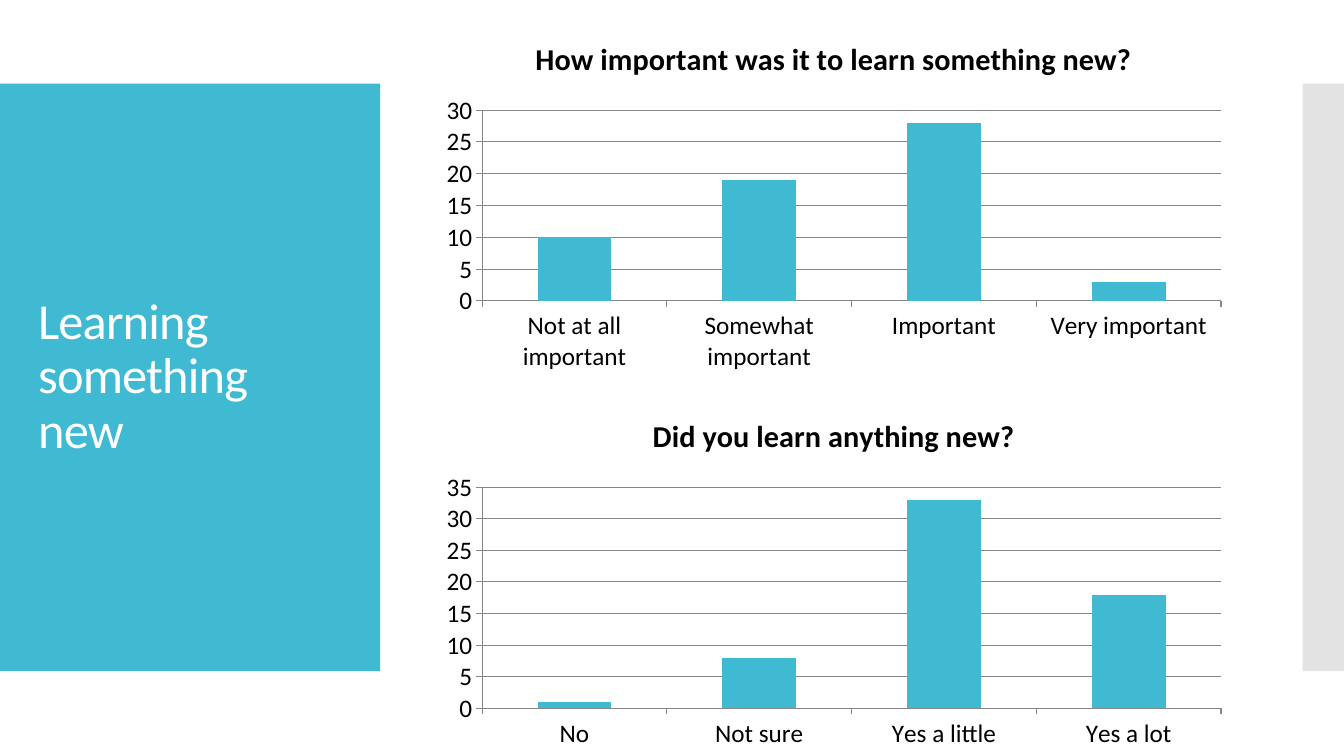
import pptx
import pptx.chart.data
import pptx.dml.color
import pptx.enum.chart
import pptx.enum.shapes
import pptx.enum.text
import pptx.oxml
import pptx.oxml.ns
import pptx.util
from pptx.util import Inches

FONT = "Calibri"
TEAL = "40BAD2"
GREY = "C8C8C8"
RULE = "868686"
CHARTS = [
    ("How important was it to learn something new?",
     ["Not at all important", "Somewhat important", "Important", "Very important"],
     [10, 19, 28, 3]),
    ("Did you learn anything new?",
     ["No", "Not sure", "Yes a little", "Yes a lot"],
     [1, 8, 33, 18]),
]


def paint(color, code):
    color.rgb = pptx.dml.color.RGBColor.from_string(code)


def style(font, size, code, bold=False):
    font.name = FONT
    font.size = pptx.util.Pt(size)
    font.bold = bold
    paint(font.color, code)


def add_panel(slide, left, width, code, alpha=100):
    """Add a full-height side panel; alpha is its opacity in percent."""
    panel = slide.shapes.add_shape(
        pptx.enum.shapes.MSO_SHAPE.RECTANGLE,
        Inches(left), Inches(0.83), Inches(width), Inches(5.83))
    panel.shadow.inherit = False
    panel.line.fill.background()
    panel.fill.solid()
    paint(panel.fill.fore_color, code)
    if alpha < 100:
        tint = panel.element.find(".//" + pptx.oxml.ns.qn("a:srgbClr"))
        node = pptx.oxml.parse_xml(
            f'<a:alpha {pptx.oxml.ns.nsdecls("a")} val="{alpha * 1000}"/>')
        tint.append(node)


def add_title(slide, text):
    box = slide.shapes.add_textbox(
        Inches(0.28), Inches(1.23), Inches(3.22), Inches(5.03))
    frame = box.text_frame
    frame.word_wrap = True
    frame.margin_right = Inches(0.3)
    frame.vertical_anchor = pptx.enum.text.MSO_ANCHOR.MIDDLE
    para = frame.paragraphs[0]
    para.line_spacing = 0.9
    run = para.add_run()
    run.text = text
    style(run.font, 36, "FFFFFF")
    props = box.element.find(".//" + pptx.oxml.ns.qn("a:rPr"))
    props.set("spc", "-60")


def add_bars(slide, top, title, names, counts):
    data = pptx.chart.data.CategoryChartData()
    data.categories = names
    data.add_series(title, counts)
    chart = slide.shapes.add_chart(
        pptx.enum.chart.XL_CHART_TYPE.COLUMN_CLUSTERED,
        Inches(4.27), Inches(top), Inches(8), Inches(3.57), data).chart
    style(chart.font, 18, "000000")
    chart.has_legend = False

    chart.has_title = True
    chart.chart_title.include_in_layout = False
    run = chart.chart_title.text_frame.paragraphs[0].add_run()
    run.text = title
    style(run.font, 21.6, "000000", bold=True)

    plot = chart.plots[0]
    plot.gap_width = 150
    plot.vary_by_categories = False
    bars = plot.series[0].format.fill
    bars.solid()
    paint(bars.fore_color, TEAL)

    grid = chart.value_axis
    grid.has_major_gridlines = True
    for axis in (chart.category_axis, grid):
        axis.major_tick_mark = pptx.enum.chart.XL_TICK_MARK.OUTSIDE
        axis.minor_tick_mark = pptx.enum.chart.XL_TICK_MARK.NONE
    for part in (chart.category_axis, grid, grid.major_gridlines):
        part.format.line.width = pptx.util.Pt(0.75)
        paint(part.format.line.color, RULE)


def main():
    deck = pptx.Presentation()
    deck.slide_width = Inches(13.33)
    deck.slide_height = Inches(7.5)
    slide = deck.slides.add_slide(deck.slide_layouts[6])
    add_panel(slide, 0, 3.77, TEAL)
    add_panel(slide, 12.92, 0.41, GREY, alpha=50)
    add_title(slide, "Learning something new")
    for row, (title, names, counts) in enumerate(CHARTS):
        add_bars(slide, 0.19 + 3.74 * row, title, names, counts)
    deck.save("out.pptx")


if __name__ == "__main__":
    main()
